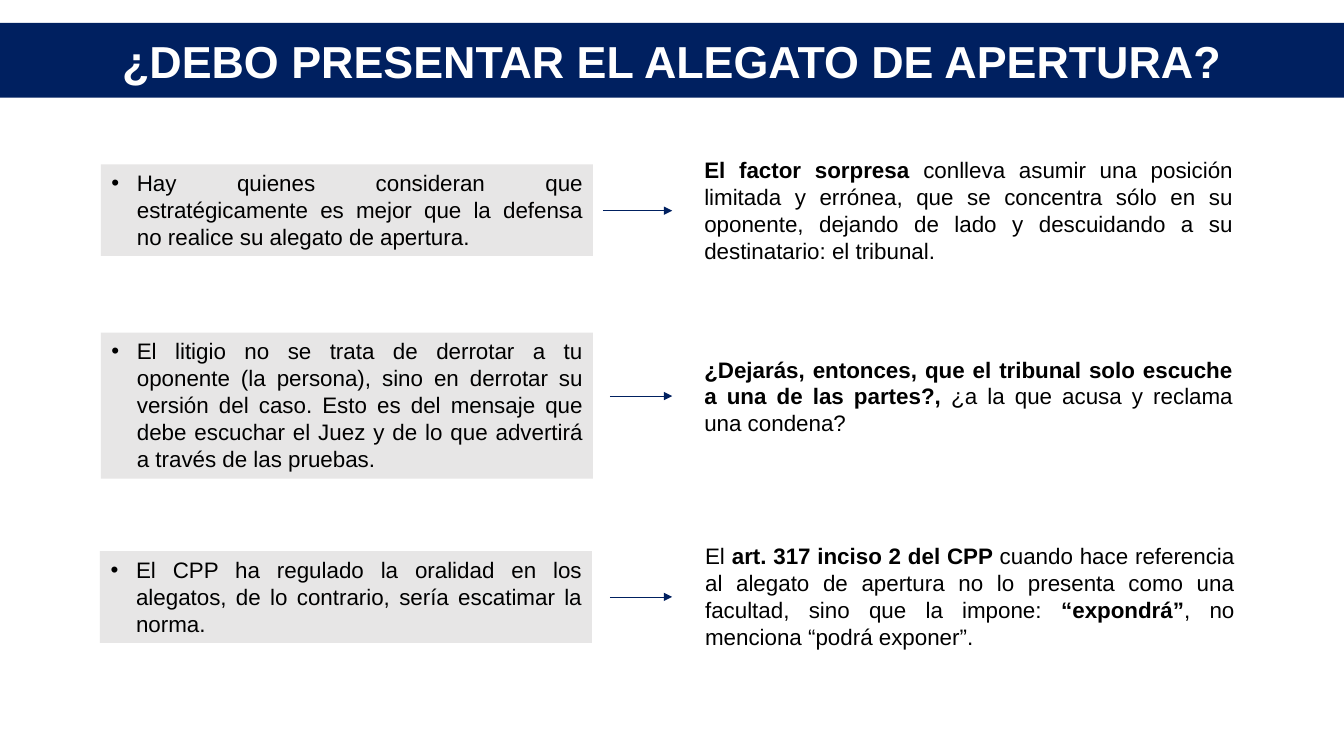
from lxml import etree
from pptx import Presentation
from pptx.dml.color import RGBColor
from pptx.enum.shapes import MSO_CONNECTOR, MSO_SHAPE
from pptx.enum.text import MSO_ANCHOR, PP_ALIGN
from pptx.oxml.ns import qn
from pptx.util import Cm, Pt

RECT, STRAIGHT = MSO_SHAPE.RECTANGLE, MSO_CONNECTOR.STRAIGHT
TOP, MIDDLE = MSO_ANCHOR.TOP, MSO_ANCHOR.MIDDLE
CENTER, JUSTIFY = PP_ALIGN.CENTER, PP_ALIGN.JUSTIFY
FONT, NAVY, GRAY, BLACK, WHITE = "Arial", "002060", "E7E6E6", "000000", "FFFFFF"
WIDTH, HEIGHT = 33.87, 19.05

# Each row: claim box, arrow (start x, y) and reply box, in cm; reply runs are (text, bold)
ROWS = [
    ((2.54, 4.14, 12.4, 2.31),
     "Hay quienes consideran que estratégicamente es mejor que la defensa no "
     "realice su alegato de apertura.",
     (15.19, 5.31),
     (17.5, 3.81, 13.82, 3),
     [("El factor sorpresa ", True),
      ("conlleva asumir una posición limitada y errónea, que se concentra sólo en su "
       "oponente, dejando de lado y descuidando a su destinatario: el tribunal.", False)]),
    ((2.54, 8.38, 12.4, 3.68),
     "El litigio no se trata de derrotar a tu oponente (la persona), sino en derrotar "
     "su versión del caso. Esto es del mensaje que debe escuchar el Juez y de lo que "
     "advertirá a través de las pruebas.",
     (15.37, 9.98),
     (17.5, 8.84, 13.82, 2.31),
     [("¿Dejarás, entonces, que el tribunal solo escuche a una de las partes?, ", True),
      ("¿a la que acusa y reclama una condena?", False)]),
    ((2.52, 13.89, 12.4, 2.31),
     "El CPP ha regulado la oralidad en los alegatos, de lo contrario, sería escatimar "
     "la norma.",
     (15.37, 15.04),
     (17.52, 13.54, 13.84, 3),
     [("El ", False), ("art. 317 inciso 2 del CPP ", True),
      ("cuando hace referencia al alegato de apertura no lo presenta como una facultad, "
       "sino que la impone: ", False),
      ("“expondrá”", True), (", no menciona “podrá exponer”.", False)]),
]
ARROW_END = 16.94


def rgb(value):
    return RGBColor.from_string(value)


def add_filled_box(s, box, fill):
    sp = s.shapes.add_shape(RECT, *map(Cm, box))
    sp.shadow.inherit = False
    sp.fill.solid()
    sp.fill.fore_color.rgb = rgb(fill)
    sp.line.fill.background()
    return sp


def write(sp, runs, size, color, align, anchor=TOP):
    tf = sp.text_frame
    tf.word_wrap = True
    tf.vertical_anchor = anchor
    p = tf.paragraphs[0]
    p.alignment = align
    p.font.name, p.font.size = FONT, Pt(size)
    p.font.color.rgb = rgb(color)
    for text, bold in runs:
        r = p.add_run()
        r.text = text
        r.font.bold = bold
    return p


def add_bullet(p):
    p.space_before = Pt(7.5)
    pPr = p._p.get_or_add_pPr()
    pPr.set("marL", str(Cm(0.66)))
    pPr.set("indent", str(Cm(-0.64)))
    font = etree.Element(qn("a:buFont"), typeface=FONT)
    char = etree.Element(qn("a:buChar"), char="•")
    pPr.find(qn("a:spcBef")).addnext(font)
    font.addnext(char)


def add_title(s, box):
    sp = add_filled_box(s, box, NAVY)
    write(sp, [("¿DEBO PRESENTAR EL ALEGATO DE APERTURA?", True)], 32, WHITE, CENTER, MIDDLE)


def add_claim(s, box, text):
    sp = add_filled_box(s, box, GRAY)
    add_bullet(write(sp, [(text, False)], 16, BLACK, JUSTIFY))


def add_reply(s, box, runs):
    write(s.shapes.add_textbox(*map(Cm, box)), runs, 16, BLACK, JUSTIFY)


def add_arrow(s, x, y):
    cxn = s.shapes.add_connector(STRAIGHT, Cm(x), Cm(y), Cm(ARROW_END), Cm(y))
    cxn.line.color.rgb = rgb(NAVY)
    cxn.line.width = Pt(0.5)
    etree.SubElement(cxn.line._get_or_add_ln(), qn("a:tailEnd"), type="triangle")
    etree.SubElement(cxn._element.spPr, qn("a:effectLst"))


def main():
    prs = Presentation()
    prs.slide_width, prs.slide_height = Cm(WIDTH), Cm(HEIGHT)
    s = prs.slides.add_slide(prs.slide_layouts[6])

    # Title band
    add_title(s, (0, 0.58, WIDTH, 1.88))

    # Claims, each with an arrow to its reply
    for claim_box, claim, arrow, reply_box, reply in ROWS:
        add_claim(s, claim_box, claim)
        add_arrow(s, *arrow)
        add_reply(s, reply_box, reply)

    prs.save("out.pptx")


if __name__ == "__main__":
    main()
